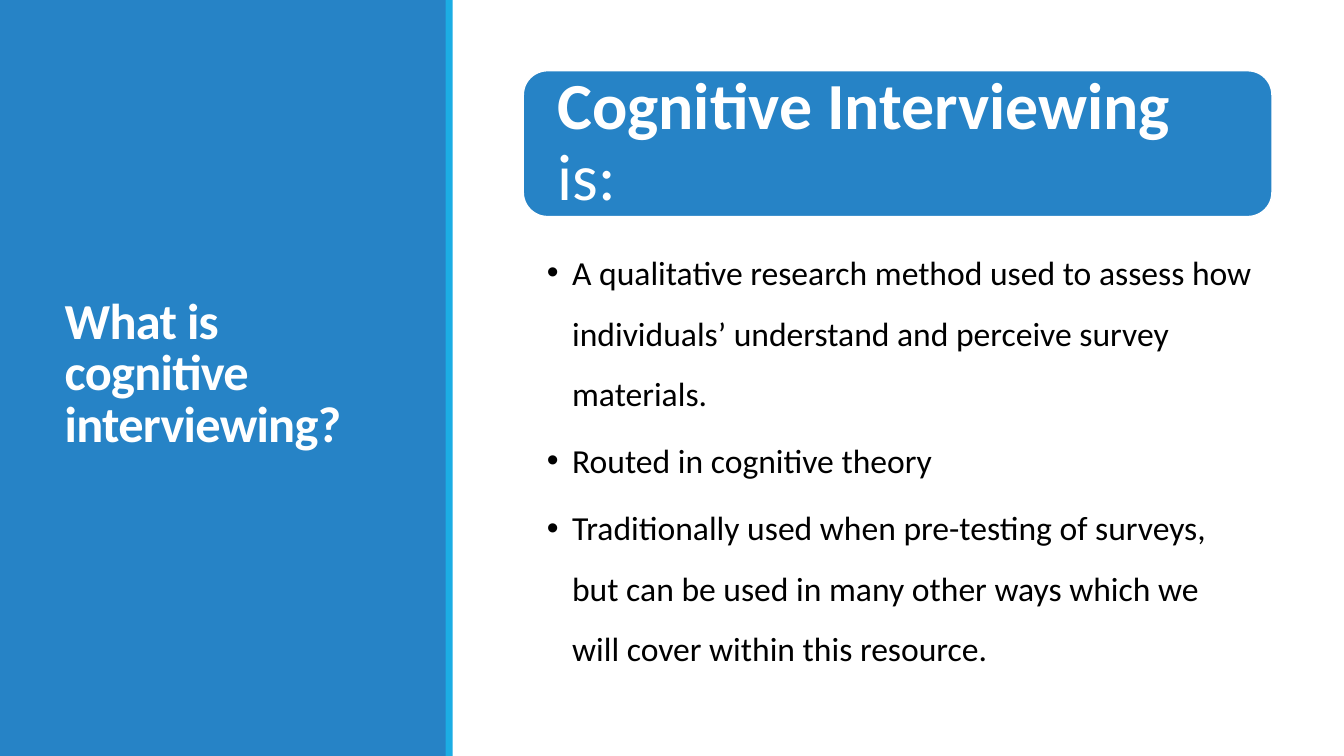
"""Build a slide that explains cognitive interviewing."""
from lxml.etree import SubElement
from pptx import Presentation
from pptx.dml.color import RGBColor
from pptx.enum.shapes import MSO_SHAPE
from pptx.enum.text import MSO_ANCHOR, MSO_AUTO_SIZE, PP_ALIGN
from pptx.oxml.ns import qn
from pptx.util import Pt

BLUE, CYAN, WHITE, BLACK = "2683C6", "1CADE4", "FFFFFF", "000000"
POINTS = [
    "A qualitative research method used to assess how individuals’ understand and perceive survey materials.",
    "Routed in cognitive theory",
    "Traditionally used when pre-testing of surveys, but can be used in many other ways which we will cover within this resource.",
]


def color(hex_text):
    return RGBColor.from_string(hex_text)


def add_block(slide, kind, left, top, width, height, fill):
    shape = slide.shapes.add_shape(kind, Pt(left), Pt(top), Pt(width), Pt(height))
    shape.shadow.inherit = False
    shape.fill.solid()
    shape.fill.fore_color.rgb = color(fill)
    shape.line.fill.background()
    return shape


def set_frame(frame, anchor, left, top, right, bottom):
    frame.word_wrap = True
    frame.auto_size = MSO_AUTO_SIZE.NONE
    frame.vertical_anchor = anchor
    frame.margin_left, frame.margin_top = Pt(left), Pt(top)
    frame.margin_right, frame.margin_bottom = Pt(right), Pt(bottom)


def style_paragraph(paragraph, size, text_color, line_spacing):
    paragraph.alignment = PP_ALIGN.LEFT
    paragraph.line_spacing = line_spacing
    paragraph.font.name = "Calibri"
    paragraph.font.size = Pt(size)
    paragraph.font.color.rgb = color(text_color)


def add_bullet(paragraph, indent):
    properties = paragraph._p.get_or_add_pPr()
    properties.set("marL", str(Pt(indent)))
    properties.set("indent", str(-Pt(indent)))
    SubElement(properties, qn("a:buFont")).set("typeface", "Arial")
    SubElement(properties, qn("a:buChar")).set("char", "•")


def place_title(slide, text):
    title = slide.shapes.title
    title.left, title.top, title.width, title.height = Pt(39), Pt(41), Pt(242.6), Pt(454.3)
    set_frame(title.text_frame, MSO_ANCHOR.MIDDLE, 7.2, 3.6, 7.2, 3.6)
    paragraph = title.text_frame.paragraphs[0]
    run = paragraph.add_run()
    run.text = text
    run.font._element.set("spc", "-50")
    style_paragraph(paragraph, 36, WHITE, 0.85)
    paragraph.font.bold = True
    slide.shapes._spTree.append(title._element)


def add_heading(slide, term, ending):
    heading = add_block(slide, MSO_SHAPE.ROUNDED_RECTANGLE, 373.7, 50.4, 535, 104.4, BLUE)
    heading.line.color.rgb = color(WHITE)
    heading.line.width = Pt(1.25)
    set_frame(heading.text_frame, MSO_ANCHOR.MIDDLE, 19.4, 19.4, 19.4, 19.4)
    paragraph = heading.text_frame.paragraphs[0]
    for text, bold in ((term, True), (ending, False)):
        run = paragraph.add_run()
        run.text = text
        run.font.bold = bold
    style_paragraph(paragraph, 47, WHITE, 0.9)


def add_points(slide, points):
    box = slide.shapes.add_textbox(Pt(373.7), Pt(163.4), Pt(535), Pt(323.3))
    frame = box.text_frame
    set_frame(frame, MSO_ANCHOR.TOP, 17, 2.2, 13.7, 2.2)
    frame.text = "\n".join(points)
    for paragraph in frame.paragraphs:
        style_paragraph(paragraph, 24, BLACK, 1.5)
        paragraph.space_after = Pt(4.8)
        add_bullet(paragraph, 18)


def main():
    presentation = Presentation()
    presentation.slide_width, presentation.slide_height = Pt(960), Pt(540)
    slide = presentation.slides.add_slide(presentation.slide_layouts[5])
    add_block(slide, MSO_SHAPE.RECTANGLE, 0, 0, 319, 540, BLUE)
    place_title(slide, "What is cognitive interviewing?")
    add_block(slide, MSO_SHAPE.RECTANGLE, 318.3, 0, 5, 540, CYAN)
    add_heading(slide, "Cognitive Interviewing", " is:")
    add_points(slide, POINTS)
    presentation.save("out.pptx")


if __name__ == "__main__":
    main()
